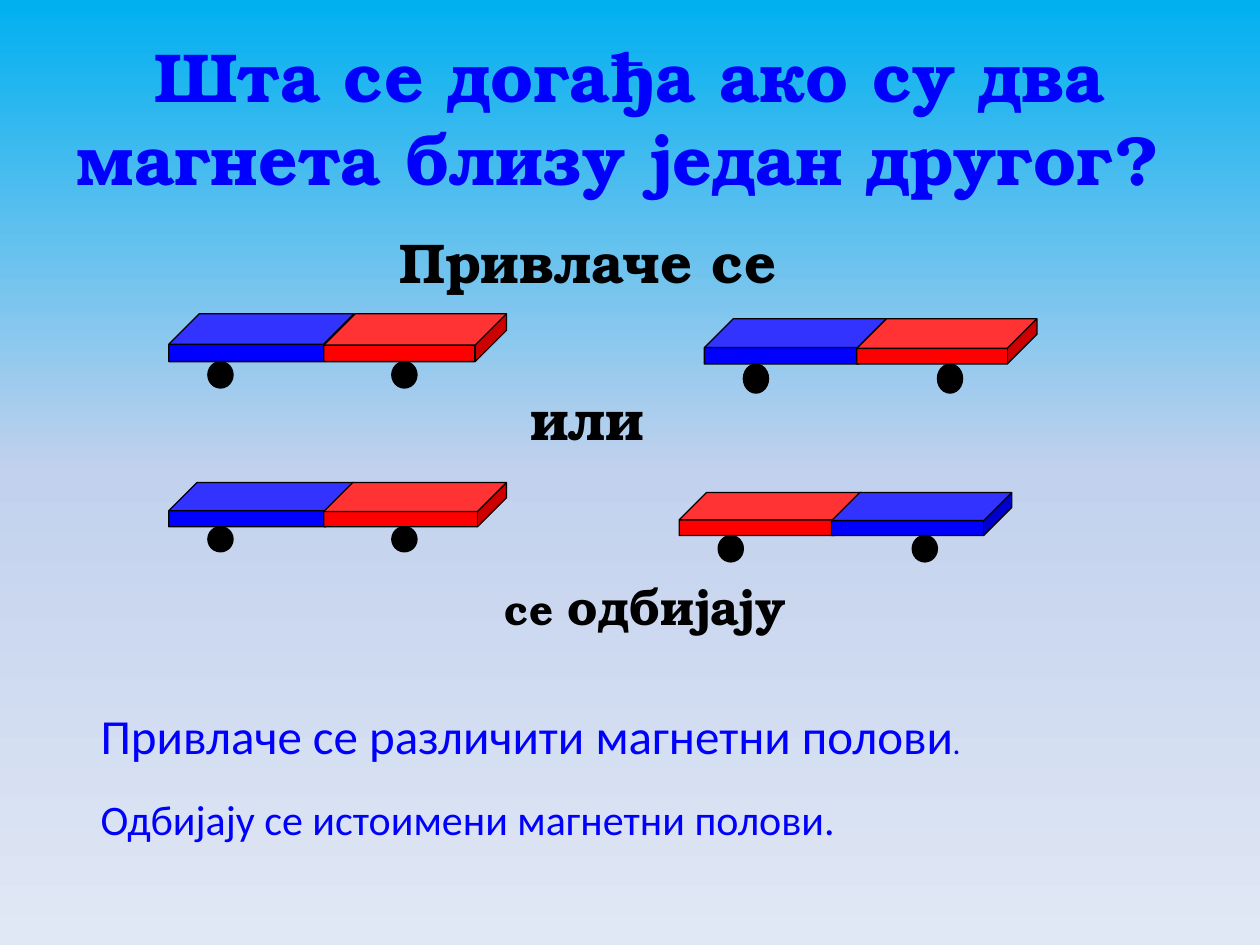
import copy

import pptx
from pptx.dml.color import RGBColor
from pptx.enum.shapes import MSO_SHAPE
from pptx.enum.text import MSO_ANCHOR, PP_ALIGN
from pptx.util import Inches, Pt

BLUE = RGBColor(0x00, 0x00, 0xFF)
RED = RGBColor(0xFF, 0x00, 0x00)
BLACK = RGBColor(0x00, 0x00, 0x00)
SKY = [(0, RGBColor(0x00, 0xB0, 0xF0)),
       (0.5, RGBColor(0xC2, 0xD1, 0xED)),
       (1, RGBColor(0xE1, 0xE8, 0xF5))]
SERIF = "TeX Gyre Bonum"
SANS = "Calibri"


class MagnetSlide:
    def __init__(self, deck):
        self.slide = deck.slides.add_slide(deck.slide_layouts[6])

    def background(self, stops):
        """Fill the slide with a gradient running from top to bottom."""
        fill = self.slide.background.fill
        fill.gradient()
        fill.gradient_angle = 270
        stop_list = self.slide.element.xpath(".//a:gsLst")[0]
        stop_list.append(copy.deepcopy(stop_list[0]))
        for stop, (position, color) in zip(fill.gradient_stops, stops):
            stop.position = position
            stop.color.rgb = color

    def text(self, box, runs, color, font=SERIF, bold=True, wrap=True,
             align=PP_ALIGN.LEFT, anchor=MSO_ANCHOR.TOP):
        """Write one paragraph; runs is a list of (wording, point size)."""
        frame = self.slide.shapes.add_textbox(*map(Inches, box)).text_frame
        frame.word_wrap = wrap
        frame.vertical_anchor = anchor
        paragraph = frame.paragraphs[0]
        paragraph.alignment = align
        for wording, size in runs:
            run = paragraph.add_run()
            run.text = wording
            run.font.name = font
            run.font.size = Pt(size)
            run.font.bold = bold
            run.font.color.rgb = color

    def solid(self, group, kind, box, color):
        shape = group.shapes.add_shape(kind, *map(Inches, box))
        shape.shadow.inherit = False
        shape.fill.solid()
        shape.fill.fore_color.rgb = color
        shape.line.color.rgb = BLACK
        shape.line.width = Pt(0.75)
        return shape

    def magnet(self, left, top, height, pole_width, rear_wheel, wheel_height, colors):
        """Draw a bar magnet of two overlapping poles on two wheels."""
        group = self.slide.shapes.add_group_shape()
        poles = [(left, pole_width, 0.637),
                 (left + pole_width - 0.24, pole_width - 0.02, 0.655)]
        for (pole_left, width, depth), color in zip(poles, colors):
            pole = self.solid(group, MSO_SHAPE.CUBE, (pole_left, top, width, height), color)
            pole.adjustments[0] = depth
        for offset in (0.31, rear_wheel):
            self.solid(group, MSO_SHAPE.OVAL,
                       (left + offset, top + height, 0.2, wheel_height), BLACK)


def main():
    deck = pptx.Presentation()
    deck.slide_width, deck.slide_height = Inches(10), Inches(7.5)
    page = MagnetSlide(deck)
    page.background(SKY)

    page.text((0.5, 0.3, 9, 1.25),
              [("Шта се догађа ако су два магнета близу један другог? ", 39.6)],
              BLUE, align=PP_ALIGN.CENTER, anchor=MSO_ANCHOR.MIDDLE)
    page.text((3.07, 1.76, 3.4, 0.63), [("Привлаче се", 32)], BLACK)
    page.text((4.11, 3, 1.3, 0.63), [("или", 32)], BLACK)

    # left, top, height, pole width, rear wheel offset, wheel height, pole colours
    magnets = [
        (1.34, 2.49, 0.38, 1.47, 1.77, 0.21, (BLUE, RED)),
        (5.59, 2.53, 0.36, 1.45, 1.85, 0.23, (BLUE, RED)),
        (1.34, 3.83, 0.35, 1.47, 1.77, 0.2, (BLUE, RED)),
        (5.39, 3.91, 0.34, 1.45, 1.85, 0.21, (RED, BLUE)),
    ]
    for magnet in magnets:
        page.magnet(*magnet)

    page.text((3.91, 4.53, 2.73, 0.57), [("се ", 24), ("одбијају", 28)], BLACK)
    page.text((0.7, 5.55, 7.2, 0.57),
              [("Привлаче се различити магнетни полови", 28), (".", 18)],
              BLUE, font=SANS, bold=False, wrap=False)
    page.text((0.7, 6.25, 6.09, 0.5), [("Одбијају се истоимени магнетни полови.", 24)],
              BLUE, font=SANS, bold=False, wrap=False)

    deck.save("out.pptx")


if __name__ == "__main__":
    main()
